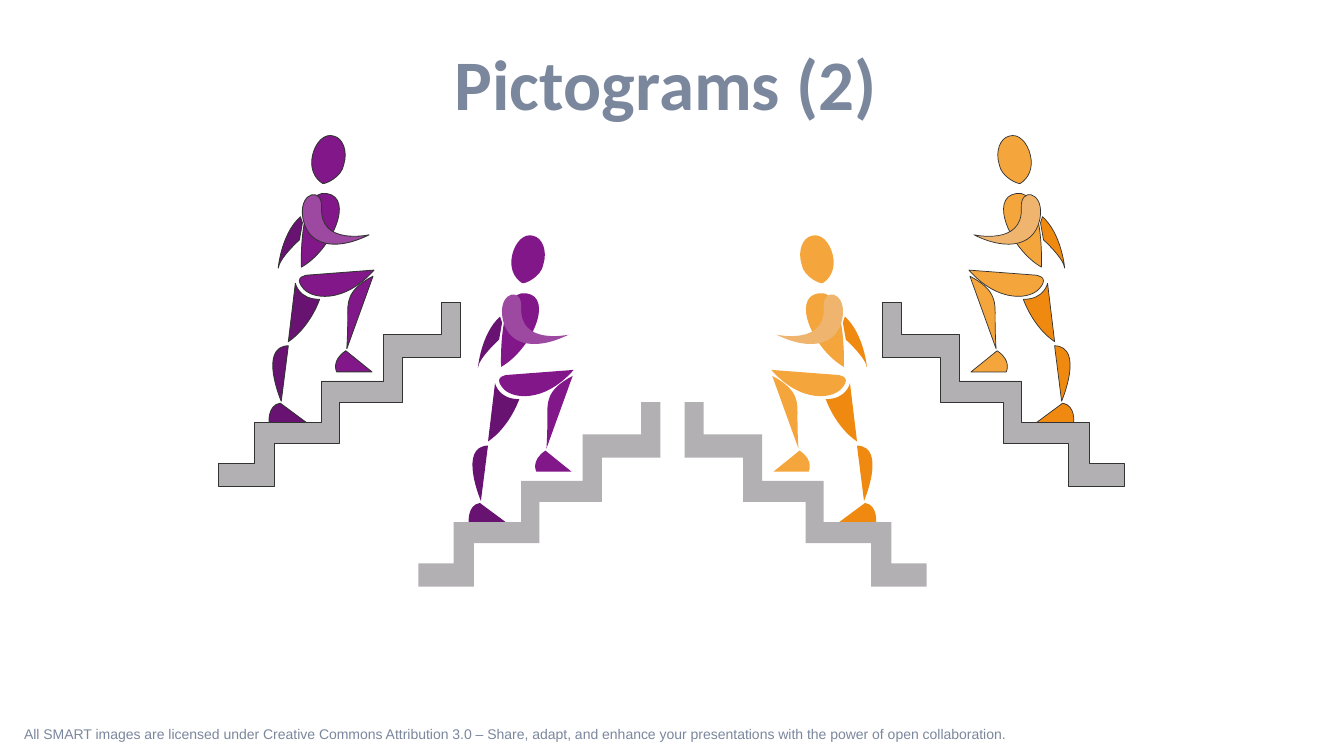
import pptx
import pptx.dml.color
import pptx.enum.text
import pptx.oxml
import pptx.oxml.ns
import pptx.util

PX = 9144  # EMU in one px, 100 px to the inch
FIGURE_WIDTH = 240

COLORS = {
    "text": "7B879D",
    "outline": "333333",
    "stairs": "B3B0B4",
}
PURPLE = {"body": "811788", "arm": "9E49A1", "far": "681272"}
ORANGE = {"body": "F4A53B", "arm": "EFB56F", "far": "EF890F"}

# Each part: colour role, start point, then segments.
# Two numbers make a straight side, six make a cubic curve.
CLIMBER = [
    # head
    ("body", (124, 31), [(122, 44, 105, 51, 103, 50), (95, 45, 90, 35, 93, 22),
                         (96, 9, 105, 0, 114, 3), (123, 5, 128, 18, 124, 31)]),
    # torso
    ("body", (82, 133), [(82, 133, 79, 55, 107, 60), (135, 64, 112, 116, 82, 133)]),
    # near arm
    ("arm", (149, 101), [(149, 101, 100, 112, 102, 74), (103, 54, 81, 58, 83, 81),
                         (86, 112, 115, 118, 149, 101)]),
    # far arm
    ("far", (81, 83), [(83, 89), (80, 106), (80, 106, 60, 124, 59, 134),
                       (59, 134, 62, 100, 81, 83)]),
    # front thigh
    ("body", (154, 136), [(88, 141), (88, 141, 74, 142, 83, 153),
                          (91, 165, 124, 170, 154, 136)]),
    # rear thigh
    ("far", (76, 149), [(76, 149, 79, 165, 100, 165), (100, 165, 91, 192, 69, 207)]),
    # front shin and foot
    ("body", (128, 183), [(128, 169, 126, 156, 153, 142), (127, 214),
                          (127, 214, 128, 202, 128, 183)]),
    ("body", (126, 216), [(152, 237), (117, 237), (117, 237, 111, 226, 126, 216)]),
    # rear shin and foot
    ("far", (69, 211), [(62, 266), (62, 266, 39, 212, 69, 211)]),
    ("far", (61, 268), [(88, 288), (50, 288), (50, 288, 48, 270, 61, 268)]),
    # stairs
    ("stairs", (0, 328), [(35, 328), (35, 287), (102, 287), (102, 246), (163, 246),
                          (163, 200), (221, 200), (221, 168), (240, 168), (240, 223),
                          (182, 223), (182, 267), (120, 267), (120, 308), (55, 308),
                          (55, 351), (0, 351)]),
]


def rgb(value):
    return pptx.dml.color.RGBColor.from_string(value)


class Pictograms:
    def __init__(self, slide):
        self.slide = slide

    def text(self, box, words, font, size, bold=False, align="LEFT", anchor="TOP", spacing=1.0):
        frame = self.slide.shapes.add_textbox(*(n * PX for n in box)).text_frame
        frame.word_wrap = True
        frame.vertical_anchor = pptx.enum.text.MSO_ANCHOR[anchor]
        paragraph = frame.paragraphs[0]
        paragraph.alignment = pptx.enum.text.PP_ALIGN[align]
        paragraph.line_spacing = spacing
        run = paragraph.add_run()
        run.text = words
        run.font.name = font
        run.font.size = pptx.util.Pt(size)
        run.font.bold = bold
        run.font.color.rgb = rgb(COLORS["text"])

    def outline(self, group, start, segments, fill, line_width):
        points = [seg[i:i + 2] for seg in segments for i in range(0, len(seg), 2)]
        builder = group.shapes.build_freeform(*start, scale=PX)
        builder.add_line_segments(points, close=True)
        part = builder.convert_to_shape()
        self.bend(part, segments)
        part.shadow.inherit = False
        part.fill.solid()
        part.fill.fore_color.rgb = rgb(fill)
        if line_width:
            part.line.color.rgb = rgb(COLORS["outline"])
            part.line.width = pptx.util.Pt(line_width)
        else:
            part.line.fill.background()

    def bend(self, part, segments):
        """Join the three points of every curve into one cubic segment."""
        sides = iter(part._element.xpath(".//a:lnTo"))
        for seg in segments:
            first = next(sides)
            if len(seg) == 6:
                first.tag = pptx.oxml.ns.qn("a:cubicBezTo")
                for side in (next(sides), next(sides)):
                    first.append(side[0])
                    side.getparent().remove(side)

    def climber(self, left, top, palette, mirrored=False, line_width=0):
        def place(numbers):
            xs, ys = numbers[::2], numbers[1::2]
            if mirrored:
                xs = [FIGURE_WIDTH - x for x in xs]
            return [n for x, y in zip(xs, ys) for n in (left + x, top + y)]

        group = self.slide.shapes.add_group_shape()
        for role, start, segments in CLIMBER:
            fill = {**COLORS, **palette}[role]
            self.outline(group, place(start), [place(s) for s in segments], fill, line_width)


def main():
    deck = pptx.Presentation()
    deck.slide_width, deck.slide_height = 1333 * PX, 750 * PX
    page = Pictograms(deck.slides.add_slide(deck.slide_layouts[6]))

    # Licence line and title
    page.text((14, 718, 1006, 24),
              "All SMART images are licensed under Creative Commons Attribution 3.0 – Share, adapt, "
              "and enhance your presentations with the power of open collaboration.",
              "Arial", 10, spacing=0.8)
    page.text((37, 8, 1247, 146), "Pictograms (2)", "Calibri", 50.7, bold=True,
              align="CENTER", anchor="MIDDLE")

    # Climbers: outlined ones above, plain ones below
    page.climber(217, 132, PURPLE, line_width=0.63)
    page.climber(415, 231, PURPLE)
    page.climber(875, 132, ORANGE, mirrored=True, line_width=0.5)
    page.climber(679, 231, ORANGE, mirrored=True)

    deck.save("out.pptx")


if __name__ == "__main__":
    main()
